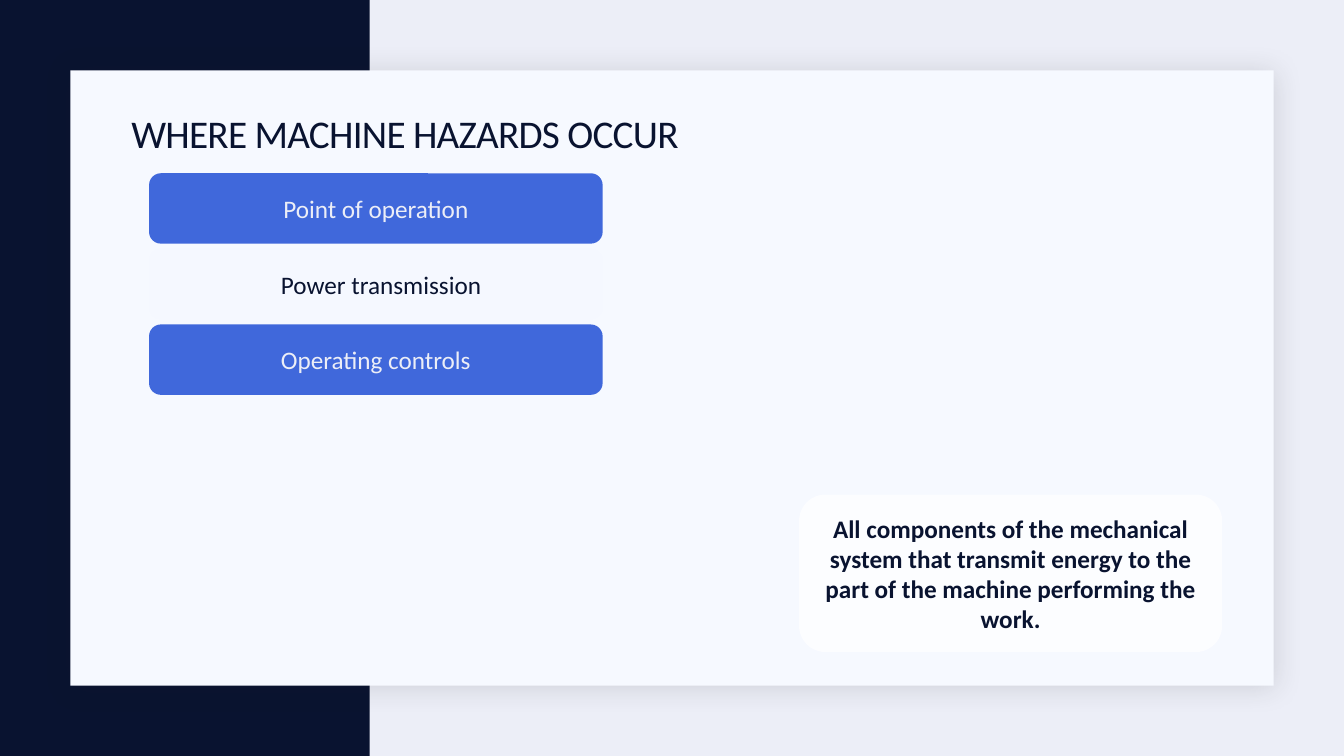
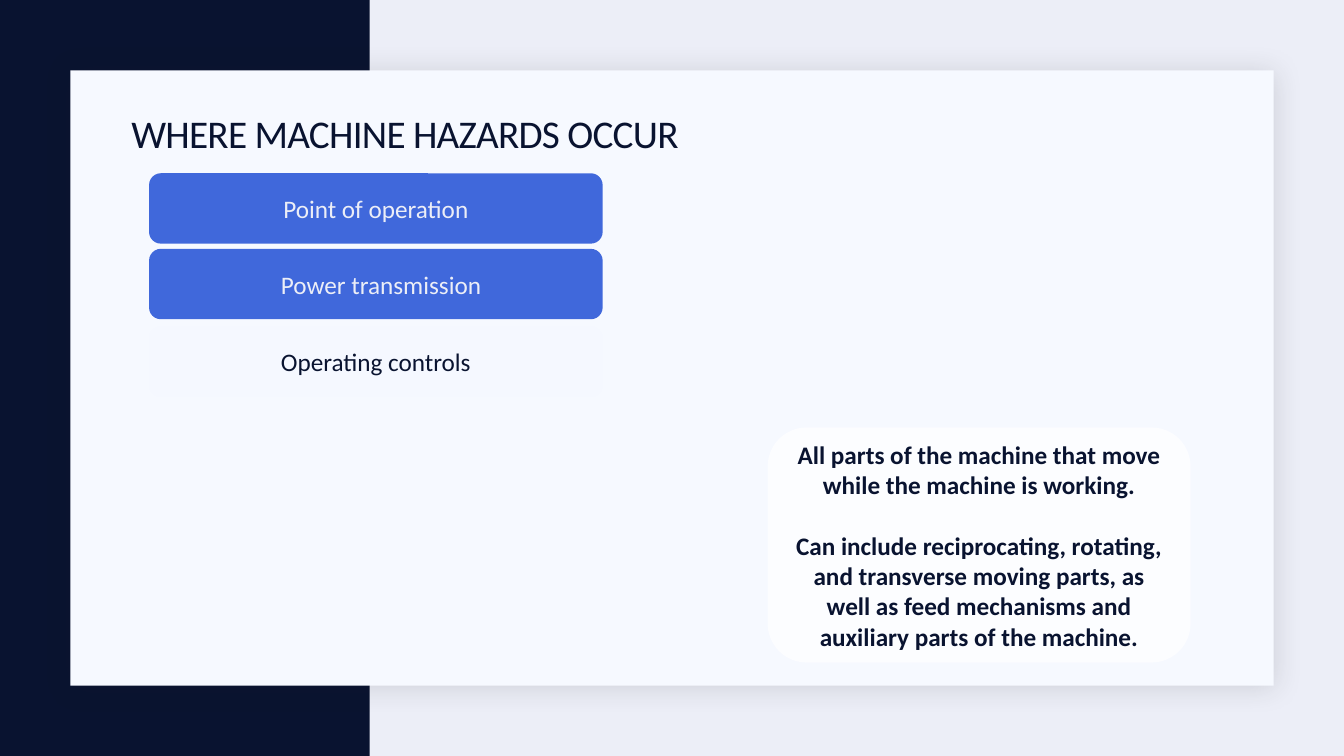
import lxml.etree
import pptx
import pptx.dml.color
import pptx.enum.shapes
import pptx.enum.text
import pptx.oxml.ns
import pptx.util

EMU_PER_PX = 9525
NAVY, BLUE, MIST, CARD, PALE, WHITE = "091330", "4068DB", "ECEEF7", "F6F9FF", "F5F8FF", "FFFFFF"
SHADOW = "1F2125"
FONT = "Calibri"
TITLE = "WHERE MACHINE HAZARDS OCCUR"
TITLE_BOX = (115, 99, 1056, 61)
MENU_BOX = (142, 165, 432, 67)
MENU_PITCH = 72
MENU_ITEMS = [("Point of operation", 0), ("Power transmission", 10), ("Operating controls", 0)]
INSET = 10
SHAPES = pptx.enum.shapes.MSO_SHAPE
ALIGN = pptx.enum.text.PP_ALIGN

SLIDES = [
    {
        "active": 1,
        "drop": 0,
        "callout_box": (761, 471, 403, 150),
        "paragraphs": [
            "All components of the mechanical system that transmit energy "
            "to the part of the machine performing the work."
        ],
    },
    {
        "active": 2,
        "drop": 2,
        "callout_box": (731, 407, 403, 224),
        "paragraphs": [
            "All parts of the machine that move while the machine is working.",
            "Can include reciprocating, rotating, and transverse moving parts, "
            "as well as feed mechanisms and auxiliary parts of the machine.",
        ],
    },
]


def px(length):
    return pptx.util.Emu(length * EMU_PER_PX)


def color(value):
    return pptx.dml.color.RGBColor.from_string(value)


def child(parent, tag, **attributes):
    return lxml.etree.SubElement(parent, pptx.oxml.ns.qn(tag), attributes)


def set_text(shape, *texts, size=18, ink=NAVY, bold=False, align=ALIGN.CENTER,
             line_spacing=None, gap=0, tracking=None, indent=0):
    frame = shape.text_frame
    frame.word_wrap = True
    frame.auto_size = pptx.enum.text.MSO_AUTO_SIZE.NONE
    frame.vertical_anchor = pptx.enum.text.MSO_ANCHOR.MIDDLE
    frame.margin_left = px(INSET + indent)
    frame.margin_right = px(INSET)
    for index, text in enumerate(texts):
        paragraph = frame.add_paragraph() if index else frame.paragraphs[0]
        paragraph.alignment = align
        paragraph.space_before = pptx.util.Pt(gap if index else 0)
        if line_spacing:
            paragraph.line_spacing = line_spacing
        run = paragraph.add_run()
        run.text = text
        run.font.name = FONT
        run.font.size = pptx.util.Pt(size)
        run.font.bold = bold
        run.font.color.rgb = color(ink)
    if tracking:
        for properties in shape.element.iter(pptx.oxml.ns.qn("a:rPr")):
            properties.set("spc", str(tracking))


def add_box(slide, box, fill, kind=SHAPES.ROUNDED_RECTANGLE, opacity=None):
    shape = slide.shapes.add_shape(kind, *map(px, box))
    shape.shadow.inherit = False
    shape.fill.solid()
    shape.fill.fore_color.rgb = color(fill)
    shape.line.fill.background()
    if opacity:
        fill_color = next(shape.element.iter(pptx.oxml.ns.qn("a:srgbClr")))
        child(fill_color, "a:alpha", val=str(opacity * 1000))
    return shape


def add_card_shadow(card):
    effects = next(card.element.iter(pptx.oxml.ns.qn("a:effectLst")))
    shadow = child(effects, "a:outerShdw", blurRad=str(pptx.util.Pt(20)),
                   dist=str(pptx.util.Pt(2)), dir=str(45 * 60000),
                   algn="ctr", rotWithShape="0")
    child(child(shadow, "a:srgbClr", val=SHADOW), "a:alpha", val="15000")


def move_backdrop_to_layout(slide, layout):
    layout.background.fill.solid()
    layout.background.fill.fore_color.rgb = color(MIST)
    band = add_box(slide, (0, 0, 352, 720), NAVY, SHAPES.RECTANGLE)
    card = add_box(slide, (67, 67, 1146, 586), CARD, SHAPES.RECTANGLE)
    add_card_shadow(card)
    for position, shape in enumerate((band, card), start=2):
        layout.shapes.element.insert(position, shape.element)


def place_title(slide, box):
    title = slide.shapes.title
    title.left, title.top, title.width, title.height = map(px, box)
    set_text(title, TITLE, size=28, align=ALIGN.LEFT, line_spacing=0.9, tracking=-50)


def add_menu(slide, box, active, drop):
    left, top, width, height = box
    for index, (label, indent) in enumerate(MENU_ITEMS):
        selected = index == active
        item_top = top + index * MENU_PITCH + (drop if selected else 0)
        item = add_box(slide, (left, item_top, width, height), PALE if selected else BLUE)
        set_text(item, label, ink=NAVY if selected else MIST, indent=indent)


def add_callout(slide, box, paragraphs):
    callout = add_box(slide, box, WHITE, opacity=70)
    set_text(callout, *paragraphs, bold=True, gap=22)


def main():
    presentation = pptx.Presentation()
    presentation.slide_width, presentation.slide_height = px(1280), px(720)
    layout = presentation.slide_layouts.get_by_name("Title Only")
    for index, content in enumerate(SLIDES):
        slide = presentation.slides.add_slide(layout)
        if index == 0:
            move_backdrop_to_layout(slide, layout)
        place_title(slide, TITLE_BOX)
        add_menu(slide, MENU_BOX, content["active"], content["drop"])
        add_callout(slide, content["callout_box"], content["paragraphs"])
    presentation.save("out.pptx")


if __name__ == "__main__":
    main()
